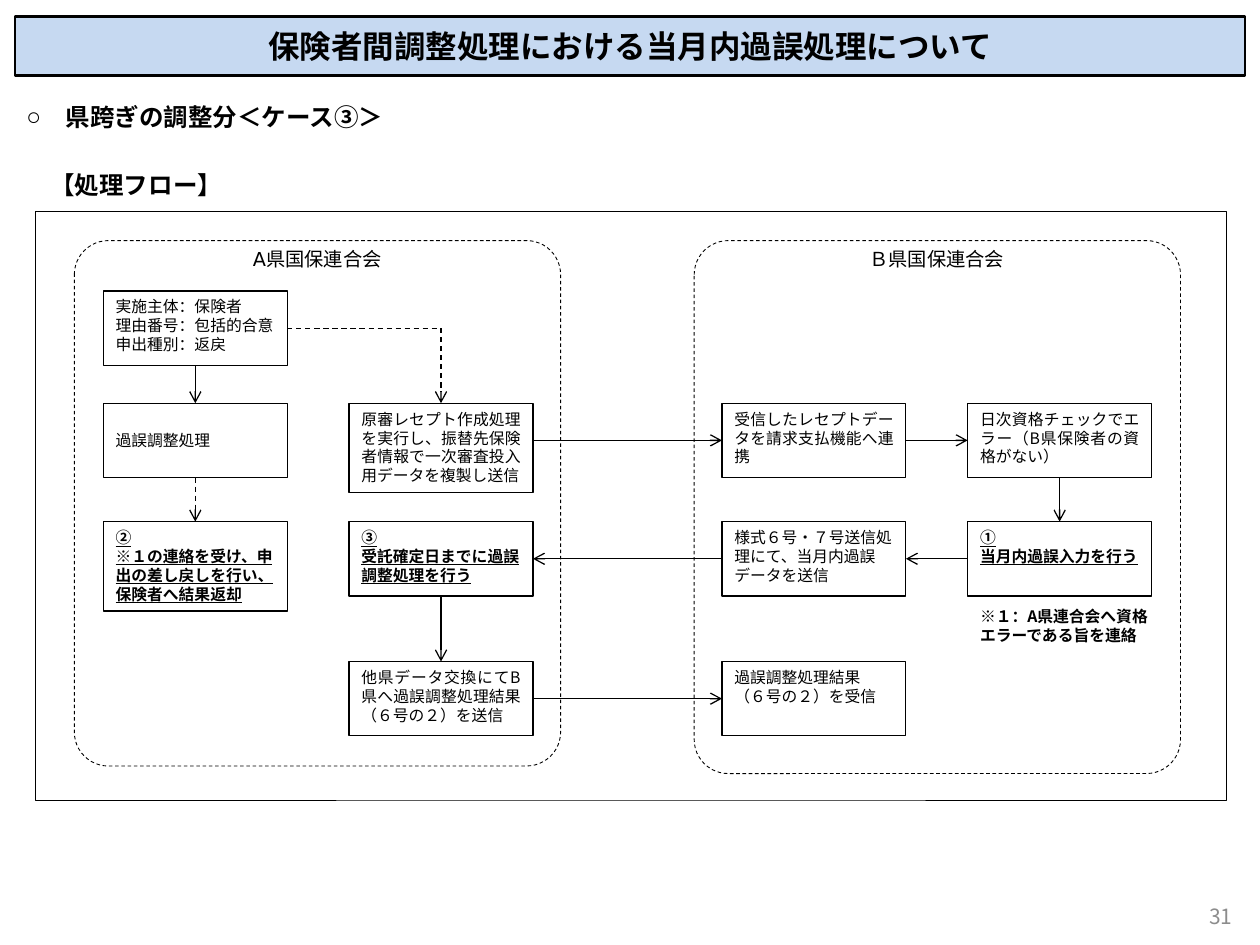
"""Build the flow slide for same-month claim adjustment between insurers."""
from dataclasses import dataclass
from typing import NamedTuple, Optional

from lxml.etree import SubElement
from pptx import Presentation
from pptx.dml.color import RGBColor
from pptx.enum.dml import MSO_LINE
from pptx.enum.shapes import MSO_CONNECTOR, MSO_SHAPE
from pptx.enum.text import MSO_ANCHOR, PP_ALIGN
from pptx.oxml.ns import qn
from pptx.util import Inches, Pt


@dataclass(frozen=True)
class Theme:
    """Colours, fonts and type sizes of the slide."""
    ink: RGBColor = RGBColor(0, 0, 0)
    band: RGBColor = RGBColor(0xC6, 0xD9, 0xF1)
    muted: RGBColor = RGBColor(0x8C, 0x8C, 0x8C)
    font: str = "Noto Sans CJK JP"
    label_font: str = "DejaVu Sans"
    title: float = 18
    body: float = 14
    number: float = 12
    label: float = 11
    box: float = 9
    leading: float = 1.2


class Step(NamedTuple):
    """A process box."""
    name: str
    x: float
    y: float
    lines: tuple
    h: float = 0.59
    strong: bool = False
    align: PP_ALIGN = PP_ALIGN.LEFT
    anchor: MSO_ANCHOR = MSO_ANCHOR.TOP


class End(NamedTuple):
    """A connector end: a free point, or a side of a named step."""
    x: float = 0
    y: float = 0
    step: Optional[str] = None
    side: int = 0


class Flow(NamedTuple):
    """A connector between two ends."""
    start: End
    end: End
    dashed: bool = False
    arrow: bool = True


class Label(NamedTuple):
    """A free text."""
    x: float
    y: float
    w: float
    h: float
    text: str
    size: float
    font: str
    color: RGBColor
    align: PP_ALIGN
    bold: bool = False
    anchor: MSO_ANCHOR = MSO_ANCHOR.TOP


T = Theme()
TOP, LEFT, BOTTOM, RIGHT = range(4)
JUST = PP_ALIGN.JUSTIFY
STEP_W = 1.46
COL = (0.82, 2.77, 5.73, 7.68)
ROW = (2.31, 3.2, 4.14, 5.25)
TURN_X, TURN_Y = COL[1] + STEP_W / 2, ROW[0] + 0.295
SEND_Y = ROW[1] + 0.295

STEPS = (
    Step("request", COL[0], ROW[0], ("実施主体：保険者", "理由番号：包括的合意", "申出種別：返戻")),
    Step("adjust", COL[0], ROW[1], ("過誤調整処理",), anchor=MSO_ANCHOR.MIDDLE),
    Step("return", COL[0], ROW[2], ("②", "※１の連絡を受け、申出の差し戻しを行い、保険者へ結果返却"),
         h=0.71, strong=True),
    Step("copy", COL[1], ROW[1],
         ("原審レセプト作成処理を実行し、振替先保険者情報で一次審査投入用データを複製し送信",),
         h=0.71, align=JUST),
    Step("accept", COL[1], ROW[2], ("③", "受託確定日までに過誤調整処理を行う"), strong=True),
    Step("exchange", COL[1], ROW[3],
         ("他県データ交換にてB県へ過誤調整処理結果（６号の２）を送信",), align=JUST),
    Step("receive", COL[2], ROW[1], ("受信したレセプトデータを請求支払機能へ連携",), align=JUST),
    Step("forms", COL[2], ROW[2], ("様式６号・７号送信処理にて、当月内過誤データを送信",)),
    Step("result", COL[2], ROW[3], ("過誤調整処理結果", "（６号の２）を受信")),
    Step("check", COL[3], ROW[1], ("日次資格チェックでエラー（B県保険者の資格がない）",), align=JUST),
    Step("input", COL[3], ROW[2], ("①", "当月内過誤入力を行う"), strong=True),
)


def join(step: str, side: int) -> End:
    """Return an end that is joined to a step."""
    return End(step=step, side=side)


FLOWS = (
    Flow(join("request", BOTTOM), join("adjust", TOP)),
    Flow(join("adjust", BOTTOM), join("return", TOP), dashed=True),
    Flow(join("request", RIGHT), End(TURN_X, TURN_Y), dashed=True, arrow=False),
    Flow(End(TURN_X, TURN_Y), join("copy", TOP), dashed=True),
    Flow(End(COL[1] + STEP_W, SEND_Y), join("receive", LEFT)),
    Flow(join("receive", RIGHT), join("check", LEFT)),
    Flow(join("check", BOTTOM), join("input", TOP)),
    Flow(join("input", LEFT), join("forms", RIGHT)),
    Flow(join("forms", LEFT), join("accept", RIGHT)),
    Flow(join("accept", BOTTOM), join("exchange", TOP)),
    Flow(join("exchange", RIGHT), join("result", LEFT)),
)

LABELS = (
    Label(1.77, 1.91, 1.5, 0.3, "A県国保連合会", T.label, T.label_font, T.ink, PP_ALIGN.CENTER),
    Label(6.65, 1.91, 1.57, 0.3, "Ｂ県国保連合会", T.label, T.label_font, T.ink, PP_ALIGN.CENTER),
    Label(COL[3], 4.77, 1.57, 0.4, "※１：A県連合会へ資格エラーである旨を連絡",
          T.box, T.font, T.ink, PP_ALIGN.LEFT, bold=True),
    Label(7.55, 7.07, 2.33, 0.4, "31", T.number, T.font, T.muted, PP_ALIGN.RIGHT,
          anchor=MSO_ANCHOR.MIDDLE),
)


def write(tf, lines, size: float, font: str = T.font, color: RGBColor = T.ink,
          bold: bool = False, underline: bool = False, align: PP_ALIGN = PP_ALIGN.LEFT) -> None:
    """Fill a text frame with one paragraph per line."""
    tf.word_wrap = True
    for i, line in enumerate(lines):
        p = tf.paragraphs[0] if i == 0 else tf.add_paragraph()
        p.text, p.alignment = line, align
        p.line_spacing = Pt(round(size * T.leading, 1))
        f = p.font
        f.name, f.size, f.bold, f.underline = font, Pt(size), bold, underline
        f.color.rgb = color
        SubElement(p._p.pPr.find(qn("a:defRPr")), qn("a:ea")).set("typeface", font)


def place(sp, x: float, y: float, w: float, h: float) -> None:
    """Move and size a placeholder."""
    sp.left, sp.top, sp.width, sp.height = map(Inches, (x, y, w, h))


def add_outline(s, kind, x: float, y: float, w: float, h: float, weight: float):
    """Draw an unfilled shape with a thin outline."""
    sp = s.shapes.add_shape(kind, *map(Inches, (x, y, w, h)))
    sp.shadow.inherit = False
    sp.fill.background()
    sp.line.color.rgb, sp.line.width = T.ink, Pt(weight)
    return sp


def add_step(s, step: Step):
    """Draw a process box."""
    sp = add_outline(s, MSO_SHAPE.RECTANGLE, step.x, step.y, STEP_W, step.h, 0.75)
    sp.text_frame.vertical_anchor = step.anchor
    write(sp.text_frame, step.lines, T.box, bold=step.strong, underline=step.strong, align=step.align)
    return sp


def add_label(s, label: Label) -> None:
    """Draw a free text."""
    tf = s.shapes.add_textbox(*map(Inches, label[:4])).text_frame
    tf.vertical_anchor = label.anchor
    write(tf, [label.text], label.size, label.font, label.color, label.bold, align=label.align)


def add_flow(s, flow: Flow, boxes: dict) -> None:
    """Draw a connector and join it to its steps."""
    a, b = flow.start, flow.end
    c = s.shapes.add_connector(MSO_CONNECTOR.STRAIGHT, *map(Inches, (a.x, a.y, b.x, b.y)))
    for end, connect in ((a, c.begin_connect), (b, c.end_connect)):
        if end.step:
            connect(boxes[end.step], end.side)
    c.line.color.rgb, c.line.width = T.ink, Pt(0.75)
    if flow.dashed:
        c.line.dash_style = MSO_LINE.DASH
    if flow.arrow:
        SubElement(c.line._get_or_add_ln(), qn("a:tailEnd")).set("type", "arrow")
    SubElement(c._element.spPr, qn("a:effectLst"))


def fill_placeholders(s) -> None:
    """Write the title band and the two headings."""
    title, body = s.shapes.title, s.placeholders[1]
    place(title, 0.12, 0.13, 9.76, 0.47)
    title.fill.solid()
    title.fill.fore_color.rgb = T.band
    title.line.color.rgb, title.line.width = T.ink, Pt(1.5)
    title.text_frame.vertical_anchor = MSO_ANCHOR.MIDDLE
    write(title.text_frame, ["保険者間調整処理における当月内過誤処理について"], T.title,
          bold=True, align=PP_ALIGN.CENTER)
    place(body, 0.11, 0.76, 9.78, 6.22)
    write(body.text_frame, ["県跨ぎの調整分＜ケース③＞", "【処理フロー】"], T.body, bold=True, align=JUST)
    looks = ((0.31, -0.31, 1, "○"), (0.19, 0, 22, None))
    for p, (margin, indent, before, bullet) in zip(body.text_frame.paragraphs, looks):
        p.space_before = Pt(before)
        pPr = p._p.pPr
        pPr.set("marL", str(Inches(margin)))
        pPr.set("indent", str(Inches(indent)))
        bu = pPr.makeelement(qn("a:buChar" if bullet else "a:buNone"), {"char": bullet} if bullet else {})
        pPr.find(qn("a:defRPr")).addprevious(bu)


def main() -> None:
    """Build and save the slide."""
    prs = Presentation()
    prs.slide_width, prs.slide_height = Inches(10), Inches(7.5)
    s = prs.slides.add_slide(prs.slide_layouts[1])
    fill_placeholders(s)
    add_outline(s, MSO_SHAPE.RECTANGLE, 0.28, 1.68, 9.45, 4.67, 0.25)
    for x, h in ((0.59, 4.17), (5.51, 4.23)):
        area = add_outline(s, MSO_SHAPE.ROUNDED_RECTANGLE, x, 1.91, 3.86, h, 0.5)
        area.adjustments[0] = 0.07
        area.line.dash_style = MSO_LINE.DASH
    boxes = {step.name: add_step(s, step) for step in STEPS}
    for flow in FLOWS:
        add_flow(s, flow, boxes)
    for label in LABELS:
        add_label(s, label)
    prs.save("out.pptx")


if __name__ == "__main__":
    main()
